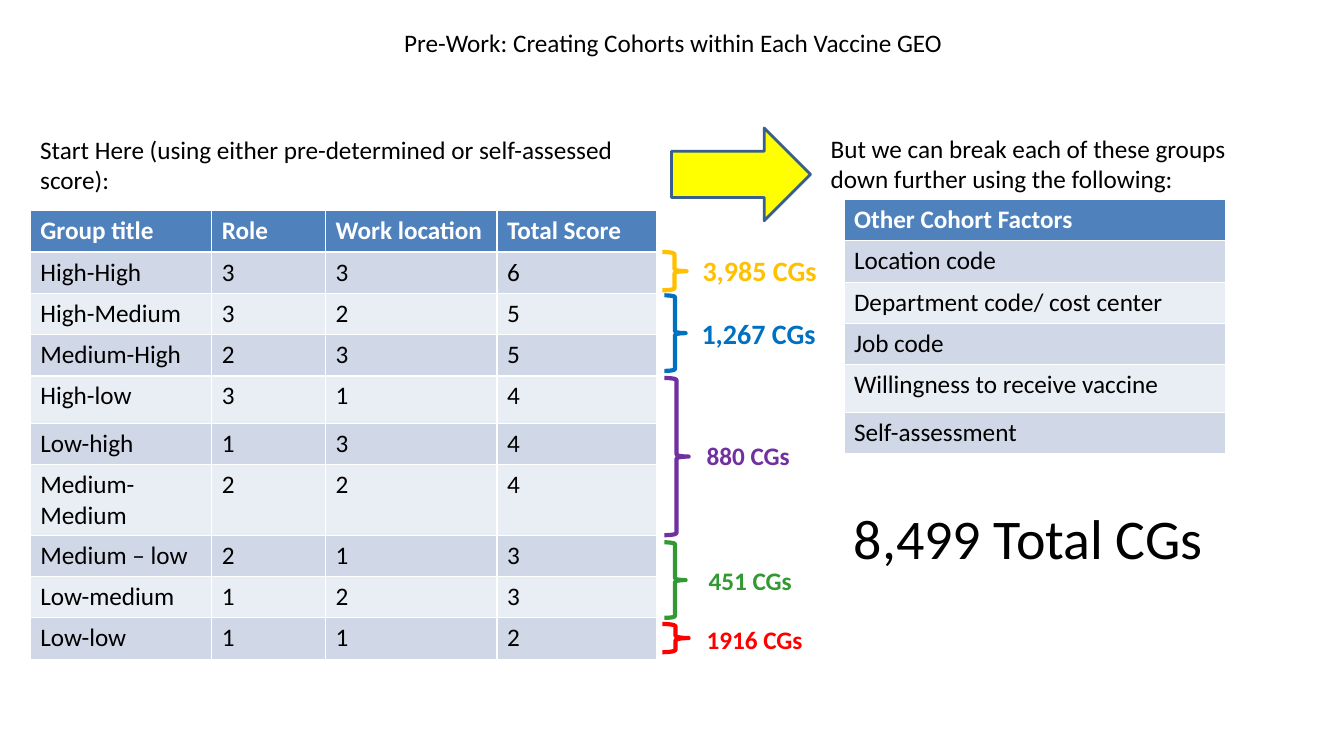
from pptx import Presentation
from pptx.dml.color import RGBColor
from pptx.enum.shapes import MSO_SHAPE
from pptx.util import Inches, Pt

TEXTS = [
    ("Pre-Work: Creating Cohorts within Each Vaccine GEO", (3.91, 0.22, 6.35, 0.4), 18, True),
    ("Start Here (using either pre-determined or self-assessed score):",
     (0.3, 1.28, 6.35, 0.71), 18, True),
    ("But we can break each of these groups down further using the following:",
     (8.14, 1.27, 4.74, 0.71), 18, True),
    ("8,499 Total CGs", (8.37, 4.95, 3.7, 0.77), 40, False),
]

GROUPS = [
    ("Group title", "Role", "Work location", "Total Score"),
    ("High-High", "3", "3", "6"),
    ("High-Medium", "3", "2", "5"),
    ("Medium-High", "2", "3", "5"),
    ("High-low", "3", "1", "4"),
    ("Low-high", "1", "3", "4"),
    ("Medium-Medium", "2", "2", "4"),
    ("Medium – low", "2", "1", "3"),
    ("Low-medium", "1", "2", "3"),
    ("Low-low", "1", "1", "2"),
]
FACTORS = [
    ("Other Cohort Factors",),
    ("Location code",),
    ("Department code/ cost center",),
    ("Job code",),
    ("Willingness to receive vaccine",),
    ("Self-assessment",),
]
TABLES = [
    (GROUPS, (0.3, 2.09), (1.8, 1.13, 1.7, 1.58)),
    (FACTORS, (8.37, 1.98), (3.79,)),
]
ROW_HEIGHT, TALL_ROW, TALL_HEIGHT = 0.41, 4, 0.47
HEADER_FILL, BAND_FILLS = "4F81BD", ("E9EDF4", "D0D8E8")

COUNTS = [
    ("3,985 CGs", "FFC000", 20, (6.57, 2.5, 0.24, 0.38), (6.87, 2.47, 1.34, 0.44)),
    ("1,267 CGs", "0070C0", 20, (6.59, 2.93, 0.21, 0.75), (6.86, 3.09, 1.34, 0.44)),
    ("880 CGs", "7030A0", 18, (6.59, 3.75, 0.24, 1.56), (6.91, 4.32, 1.03, 0.4)),
    ("451 CGs", "339933", 18, (6.59, 5.38, 0.21, 0.75), (6.93, 5.56, 1.03, 0.4)),
    ("1916 CGs", "FF0000", 18, (6.57, 6.19, 0.26, 0.28), (6.91, 6.14, 1.16, 0.4)),
]
ARROW = (6.66, 1.27, 1.38, 0.92)


def color(hex_code):
    return RGBColor.from_string(hex_code)


def write(frame, text, size=18, ink="000000", bold=False):
    run = frame.paragraphs[0].add_run()
    run.text = text
    run.font.name = "Calibri"
    run.font.size = Pt(size)
    run.font.bold = bold
    run.font.color.rgb = color(ink)


def add_label(slide, text, box, wrap=False, **style):
    frame = slide.shapes.add_textbox(*map(Inches, box)).text_frame
    frame.word_wrap = wrap
    write(frame, text, **style)


def add_outline(slide, preset, box, ink, width, fill=None):
    shape = slide.shapes.add_shape(preset, *map(Inches, box))
    shape.shadow.inherit = False
    shape.line.color.rgb = color(ink)
    shape.line.width = Pt(width)
    if fill:
        shape.fill.solid()
        shape.fill.fore_color.rgb = color(fill)
    else:
        shape.fill.background()


def add_grid(slide, rows, corner, widths):
    heights = [TALL_HEIGHT if r == TALL_ROW else ROW_HEIGHT for r in range(len(rows))]
    size = (sum(widths), sum(heights))
    table = slide.shapes.add_table(len(rows), len(widths), *map(Inches, corner + size)).table
    for column, width in zip(table.columns, widths):
        column.width = Inches(width)
    for r, values in enumerate(rows):
        table.rows[r].height = Inches(heights[r])
        header = r == 0
        for c, value in enumerate(values):
            cell = table.cell(r, c)
            cell.fill.solid()
            cell.fill.fore_color.rgb = color(HEADER_FILL if header else BAND_FILLS[r % 2])
            write(cell.text_frame, value, ink="FFFFFF" if header else "000000", bold=header)


def main():
    deck = Presentation()
    deck.slide_width, deck.slide_height = Inches(13.33), Inches(7.5)
    slide = deck.slides.add_slide(deck.slide_layouts[6])
    for text, box, size, wrap in TEXTS:
        add_label(slide, text, box, wrap, size=size)
    for rows, corner, widths in TABLES:
        add_grid(slide, rows, corner, widths)
    add_outline(slide, MSO_SHAPE.RIGHT_ARROW, ARROW, "3A5F8C", 2, fill="FFFF00")
    for count, ink, size, brace, label in COUNTS:
        add_outline(slide, MSO_SHAPE.RIGHT_BRACE, brace, ink, 3)
        add_label(slide, count, label, size=size, ink=ink, bold=True)
    deck.save("out.pptx")


if __name__ == "__main__":
    main()
